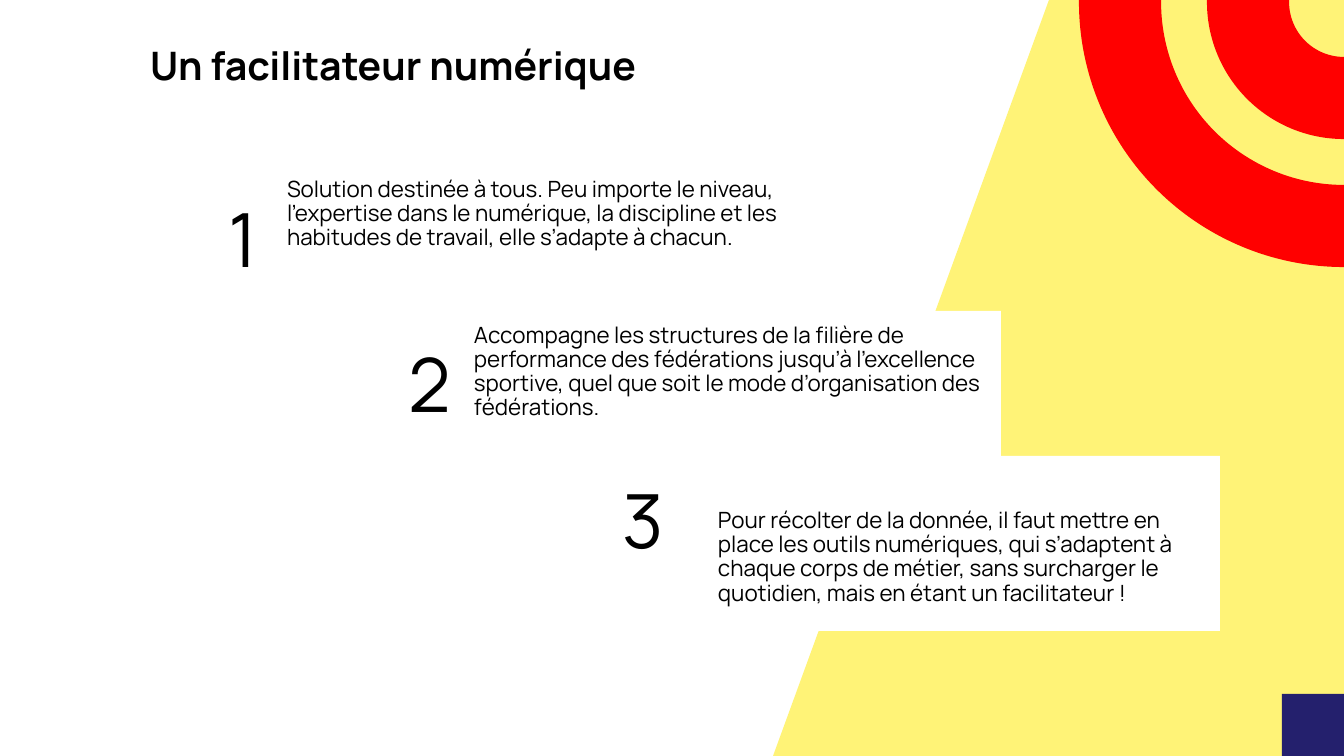
from pptx import Presentation
from pptx.dml.color import RGBColor
from pptx.enum.shapes import MSO_SHAPE
from pptx.enum.text import MSO_ANCHOR, MSO_AUTO_SIZE, PP_ALIGN
from pptx.util import Emu, Pt

WIDTH, HEIGHT = 1344, 756
SCALE = 9144000 / WIDTH

BLACK = RGBColor(0x00, 0x00, 0x00)
WHITE = RGBColor(0xFF, 0xFF, 0xFF)
YELLOW = RGBColor(0xFF, 0xF3, 0x77)
RED = RGBColor(0xFF, 0x00, 0x00)
NAVY = RGBColor(0x24, 0x20, 0x6D)


def px(length):
    return Emu(round(length * SCALE))


class SlideBuilder:
    """Holds the text style and the slide being filled."""

    font = "Manrope"
    line_spacing = 0.9

    def __init__(self, page):
        self.page = page

    def set_text(self, shape, text, size, insets, bold=False,
                 anchor=MSO_ANCHOR.TOP, spacing=None):
        """Fill a shape with one paragraph; insets are left, top, right, bottom."""
        frame = shape.text_frame
        frame.word_wrap = True
        frame.auto_size = MSO_AUTO_SIZE.NONE
        frame.vertical_anchor = anchor
        (frame.margin_left, frame.margin_top,
         frame.margin_right, frame.margin_bottom) = map(px, insets)
        paragraph = frame.paragraphs[0]
        paragraph.alignment = PP_ALIGN.LEFT
        paragraph.line_spacing = spacing
        span = paragraph.add_run()
        span.text = text
        span.font.name = self.font
        span.font.size = Pt(size)
        span.font.bold = bold
        span.font.color.rgb = BLACK

    def title(self, text, bounds):
        title = self.page.shapes.title
        title.left, title.top, title.width, title.height = map(px, bounds)
        self.set_text(title, text, 21, (10, 5, 10, 5), bold=True,
                      spacing=self.line_spacing)

    def polygon(self, points, color):
        builder = self.page.shapes.build_freeform(*points[0], scale=SCALE)
        builder.add_line_segments(points[1:], close=True)
        shape = builder.convert_to_shape()
        shape.shadow.inherit = False
        shape.fill.solid()
        shape.fill.fore_color.rgb = color
        shape.line.fill.background()

    def rectangle(self, bounds, color):
        box = self.page.shapes.add_shape(MSO_SHAPE.RECTANGLE, *map(px, bounds))
        box.shadow.inherit = False
        box.fill.solid()
        box.fill.fore_color.rgb = color
        box.line.fill.background()
        return box

    def ring(self, center_x, center_y, radius, color, thickness):
        bounds = (center_x - radius, center_y - radius, 2 * radius, 2 * radius)
        ring = self.page.shapes.add_shape(MSO_SHAPE.OVAL, *map(px, bounds))
        ring.shadow.inherit = False
        ring.fill.background()
        ring.line.color.rgb = color
        ring.line.width = Pt(thickness)

    def statement(self, text, bounds, insets, anchor):
        box = self.rectangle(bounds, WHITE)
        self.set_text(box, text, 12, insets, anchor=anchor,
                      spacing=self.line_spacing)

    def number(self, text, left, top):
        box = self.page.shapes.add_textbox(*map(px, (left, top, 58, 114)))
        self.set_text(box, text, 40, EVEN)


EVEN = (13, 13, 13, 13)
STATEMENTS = [
    ("Pour récolter de la donnée, il faut mettre en place les outils "
     "numériques, qui s’adaptent à chaque corps de métier, sans surcharger "
     "le quotidien, mais en étant un facilitateur !",
     (706, 456, 514, 175), (12, 40, 20, 12), MSO_ANCHOR.MIDDLE),
    ("Solution destinée à tous. Peu importe le niveau, l’expertise dans le "
     "numérique, la discipline et les habitudes de travail, elle s’adapte "
     "à chacun.",
     (274, 165, 520, 164), EVEN, MSO_ANCHOR.TOP),
    ("Accompagne les structures de la filière de performance des fédérations "
     "jusqu’à l’excellence sportive, quel que soit le mode d’organisation "
     "des fédérations.",
     (461, 311, 540, 156), EVEN, MSO_ANCHOR.TOP),
]
NUMBERS = [("1", 216, 180), ("2", 396, 325), ("3", 610, 461)]


def main():
    deck = Presentation()
    deck.slide_width, deck.slide_height = px(WIDTH), px(HEIGHT)
    page = deck.slides.add_slide(deck.slide_layouts[5])
    page.background.fill.solid()
    page.background.fill.fore_color.rgb = WHITE

    slide = SlideBuilder(page)
    slide.title("Un facilitateur numérique", (140, 42, 910, 59))
    slide.polygon([(1049, 0), (WIDTH, 0), (WIDTH, HEIGHT), (773, HEIGHT)], YELLOW)
    slide.rectangle((1282, 694, 62, 62), NAVY)
    for radius in (224, 96):
        slide.ring(WIDTH, 2, radius, RED, 44)
    for statement in STATEMENTS:
        slide.statement(*statement)
    for number in NUMBERS:
        slide.number(*number)
    deck.save("out.pptx")


if __name__ == "__main__":
    main()
